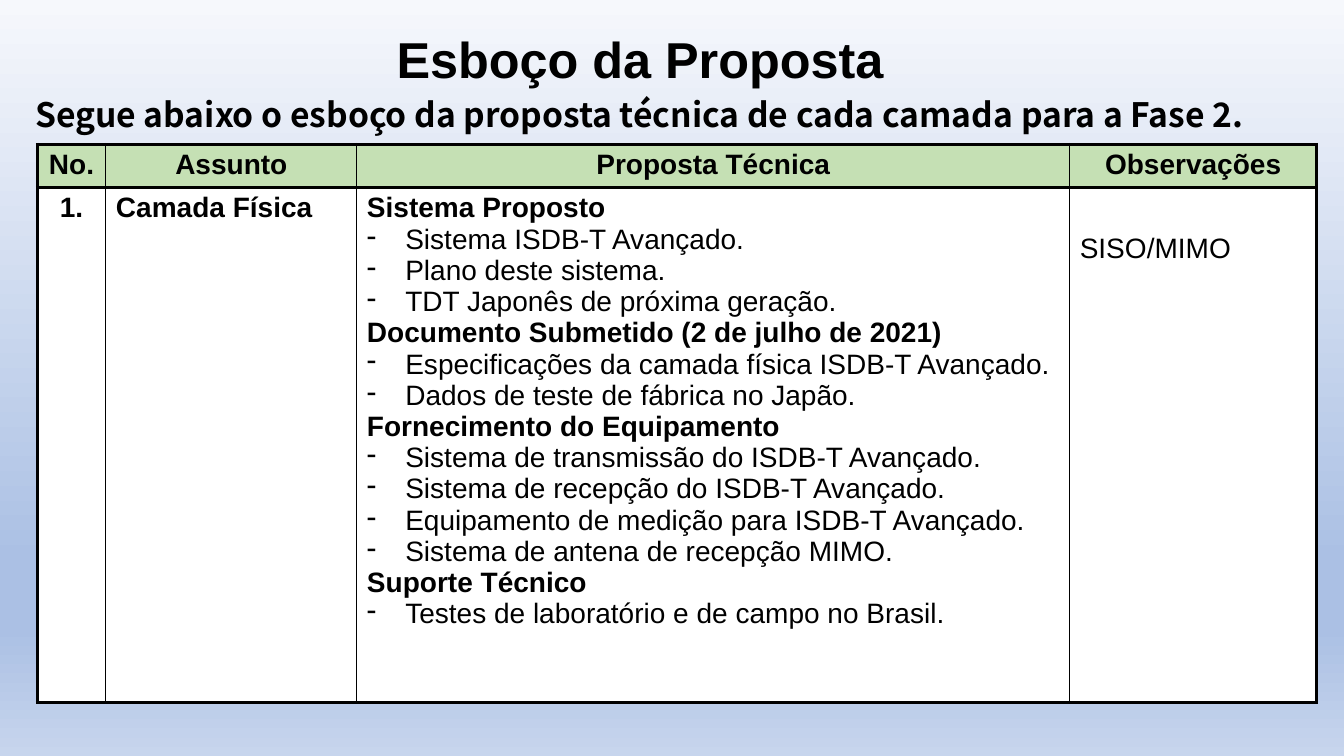
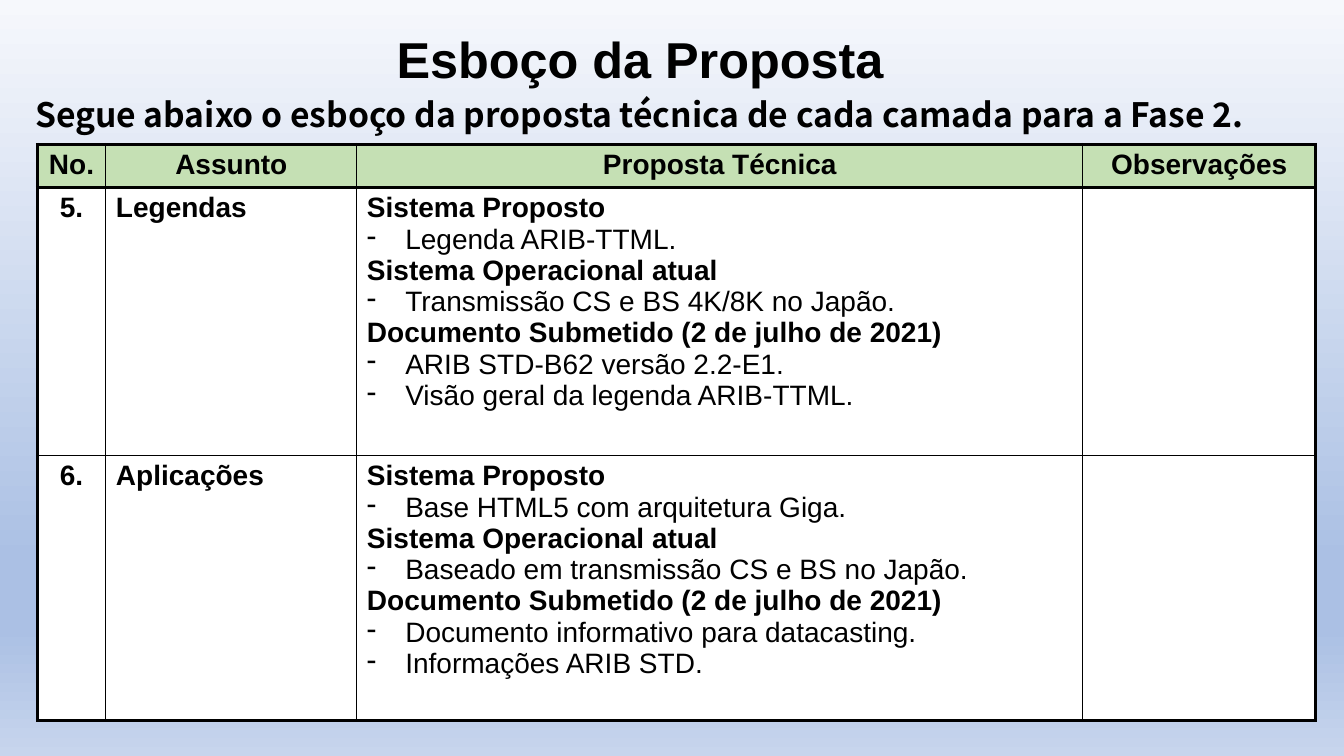
"""Build two slides that outline the technical proposal by layer."""
from lxml import etree
from pptx import Presentation
from pptx.dml.color import RGBColor
from pptx.enum.text import MSO_ANCHOR, MSO_AUTO_SIZE, PP_ALIGN
from pptx.oxml.ns import qn
from pptx.util import Inches, Pt

CENTER, LEFT = PP_ALIGN.CENTER, PP_ALIGN.LEFT
BOTTOM, TOP = MSO_ANCHOR.BOTTOM, MSO_ANCHOR.TOP
NO_FIT = MSO_AUTO_SIZE.NONE
TITLE_ONLY = 5

COLORS = {"ink": "000000", "header": "C5E0B4", "body": "FFFFFF"}
SKY = {0: "F6F8FC", 74: "ABC0E4", 83: "ABC0E4", 100: "C7D5ED"}
FORMATS = {
    "title": {"name": "Arial", "size": Pt(36), "bold": True},
    "lead": {"name": "Noto Sans CJK JP", "size": Pt(24), "bold": True},
    "strong": {"name": "Arial", "size": Pt(20), "bold": True},
    "plain": {"name": "Arial", "size": Pt(20), "bold": False},
}
THICK, THIN = Pt(2.25), Pt(1)
HEADER_HEIGHT = 0.43
HEADINGS = ["No.", "Assunto", "Proposta Técnica", "Observações"]
TITLE = "Esboço da Proposta"
LEAD = "Segue abaixo o esboço da proposta técnica de cada camada para a Fase 2."
SUBMITTED = "Documento Submetido (2 de julho de 2021)"

PROPOSALS = [
    {
        "widths": [0.68, 2.49, 7.07, 2.45],
        "layers": [
            ("1.", "Camada Física", 5.11, {
                "Sistema Proposto": [
                    "Sistema ISDB-T Avançado.",
                    "Plano deste sistema.",
                    "TDT Japonês de próxima geração."],
                SUBMITTED: [
                    "Especificações da camada física ISDB-T Avançado.",
                    "Dados de teste de fábrica no Japão."],
                "Fornecimento do Equipamento": [
                    "Sistema de transmissão do ISDB-T Avançado.",
                    "Sistema de recepção do ISDB-T Avançado.",
                    "Equipamento de medição para ISDB-T Avançado.",
                    "Sistema de antena de recepção MIMO."],
                "Suporte Técnico": [
                    "Testes de laboratório e de campo no Brasil."],
            }, "SISO/MIMO"),
        ],
    },
    {
        "widths": [0.68, 2.49, 7.2, 2.31],
        "layers": [
            ("5.", "Legendas", 2.66, {
                "Sistema Proposto": ["Legenda ARIB-TTML."],
                "Sistema Operacional atual": [
                    "Transmissão CS e BS 4K/8K no Japão."],
                SUBMITTED: [
                    "ARIB STD-B62 versão 2.2-E1.",
                    "Visão geral da legenda ARIB-TTML."],
            }, ""),
            ("6.", "Aplicações", 2.63, {
                "Sistema Proposto": ["Base HTML5 com arquitetura Giga."],
                "Sistema Operacional atual": [
                    "Baseado em transmissão CS e BS no Japão."],
                SUBMITTED: [
                    "Documento informativo para datacasting.",
                    "Informações ARIB STD."],
            }, ""),
        ],
    },
]


class Deck:
    """Hold the shared style and the current slide."""

    def __init__(self):
        """Set the slide size and the shared background."""
        self.prs = Presentation()
        self.prs.slide_width, self.prs.slide_height = Inches(13.33), Inches(7.5)
        self.slide = None
        self.paint_background(self.prs.slide_master)

    def paint_background(self, master):
        """Fill the master with the vertical sky gradient."""
        fill = master.background.fill
        fill.gradient()
        fill.gradient_angle = 270
        stops = master.element.xpath(".//p:bg//a:gsLst")[0]
        for stop in list(stops):
            stops.remove(stop)
        for percent, color in SKY.items():
            stop = etree.SubElement(stops, qn("a:gs"), pos=str(percent * 1000))
            etree.SubElement(stop, qn("a:srgbClr"), val=color)

    def add_text(self, paragraph, text, style, align=LEFT):
        """Add one styled run to a paragraph."""
        paragraph.alignment = align
        run = paragraph.add_run()
        run.text = text
        for attribute, value in FORMATS[style].items():
            setattr(run.font, attribute, value)
        run.font.color.rgb = RGBColor.from_string(COLORS["ink"])

    def frame(self, shape, anchor):
        """Prepare the text frame of a shape and return its first paragraph."""
        settings = {"word_wrap": True, "auto_size": NO_FIT, "vertical_anchor": anchor}
        for attribute, value in settings.items():
            setattr(shape.text_frame, attribute, value)
        return shape.text_frame.paragraphs[0]

    def add_slide(self, title):
        """Start a slide with its title."""
        self.slide = self.prs.slides.add_slide(self.prs.slide_layouts[TITLE_ONLY])
        heading = self.slide.shapes.title
        place = {"left": 0.6, "top": 0.23, "width": 11.5, "height": 0.71}
        for attribute, value in place.items():
            setattr(heading, attribute, Inches(value))
        paragraph = self.frame(heading, BOTTOM)
        paragraph.line_spacing = 0.9
        paragraph.space_after = Pt(6)
        self.add_text(paragraph, title, "title", CENTER)

    def add_lead(self, text):
        """Add the sentence between the title and the table."""
        lead = self.slide.shapes.add_textbox(
            Inches(0.25), Inches(0.88), Inches(12.45), Inches(0.5))
        self.add_text(self.frame(lead, TOP), text, "lead")

    def style_cell(self, cell, color, borders):
        """Give a cell its borders and fill."""
        properties = cell._tc.get_or_add_tcPr()
        for side, width in borders.items():
            line = etree.SubElement(properties, qn(f"a:ln{side}"), w=str(width))
            solid = etree.SubElement(line, qn("a:solidFill"))
            etree.SubElement(solid, qn("a:srgbClr"), val=COLORS["ink"])
        cell.fill.solid()
        cell.fill.fore_color.rgb = RGBColor.from_string(COLORS[color])

    def add_sections(self, cell, sections):
        """Add bold headings, each followed by its dashed items."""
        lines = [line for heading, items in sections.items()
                 for line in [(heading, "strong")] + [(item, "plain") for item in items]]
        for index, (text, style) in enumerate(lines):
            text_frame = cell.text_frame
            paragraph = text_frame.add_paragraph() if index else text_frame.paragraphs[0]
            if style == "plain":
                properties = paragraph._p.get_or_add_pPr()
                properties.set("marL", str(Inches(0.38)))
                properties.set("indent", str(-Inches(0.38)))
                etree.SubElement(properties, qn("a:buChar"), char="-")
            self.add_text(paragraph, text, style)

    def add_proposal(self, widths, layers):
        """Add the table of layers and their proposals."""
        heights = [HEADER_HEIGHT] + [layer[2] for layer in layers]
        table = self.slide.shapes.add_table(
            len(heights), len(widths), Inches(0.37), Inches(1.43),
            Inches(sum(widths)), Inches(sum(heights))).table
        table.horz_banding = False
        for column, width in zip(table.columns, widths):
            column.width = Inches(width)
        last_row, last_column = len(heights) - 1, len(widths) - 1
        for r, height in enumerate(heights):
            table.rows[r].height = Inches(height)
            for c in range(len(widths)):
                self.style_cell(table.cell(r, c), "body" if r else "header", {
                    "L": THIN if c else THICK,
                    "R": THICK if c == last_column else THIN,
                    "T": THICK if r < 2 else THIN,
                    "B": THICK if r in (0, last_row) else THIN,
                })
        for c, heading in enumerate(HEADINGS):
            self.add_text(table.cell(0, c).text_frame.paragraphs[0], heading, "strong", CENTER)
        for r, (number, subject, _, sections, remark) in enumerate(layers, 1):
            number_cell, subject_cell, proposal_cell, remark_cell = table.rows[r].cells
            self.add_text(number_cell.text_frame.paragraphs[0], number, "strong", CENTER)
            self.add_text(subject_cell.text_frame.paragraphs[0], subject, "strong")
            self.add_sections(proposal_cell, sections)
            if remark:
                remark_cell.margin_top = Inches(0.45)
                self.add_text(remark_cell.text_frame.paragraphs[0], remark, "plain")


def main():
    """Build and save the slides."""
    deck = Deck()
    for proposal in PROPOSALS:
        deck.add_slide(TITLE)
        deck.add_lead(LEAD)
        deck.add_proposal(**proposal)
    deck.prs.save("out.pptx")


if __name__ == "__main__":
    main()
